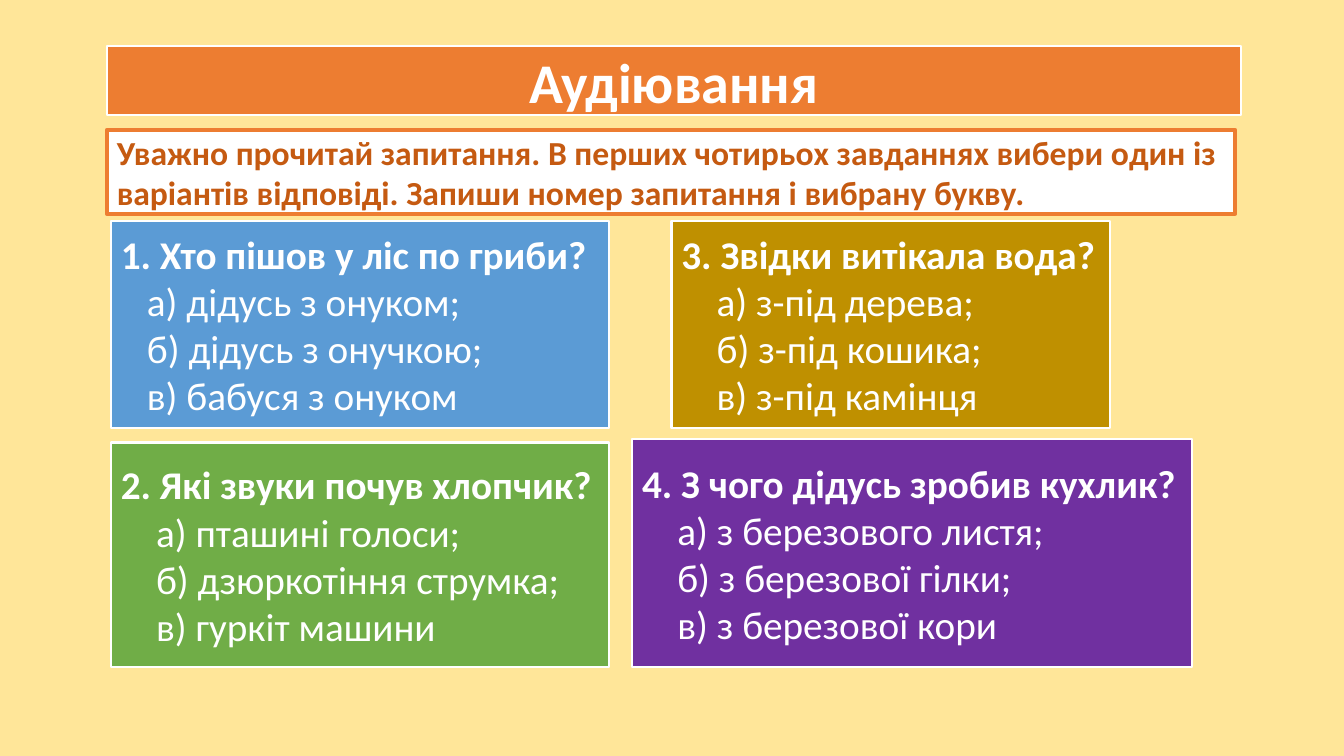
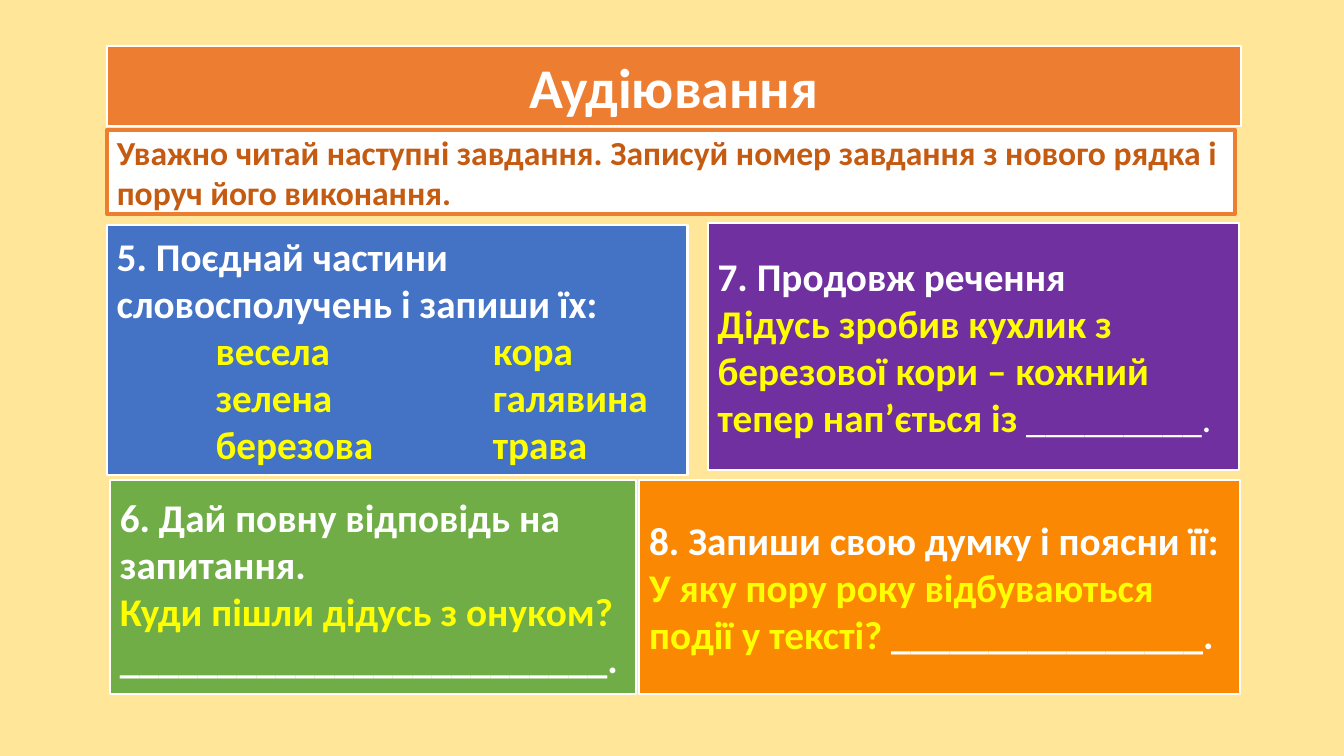
from lxml.etree import SubElement
from pptx import Presentation
from pptx.dml.color import RGBColor
from pptx.enum.shapes import MSO_SHAPE
from pptx.enum.text import MSO_ANCHOR, MSO_AUTO_SIZE, PP_ALIGN
from pptx.oxml.ns import qn
from pptx.util import Inches, Pt

COLORS = {
    "sand": "FFE699",
    "white": "FFFFFF",
    "orange": "ED7D31",
    "rust": "C55A11",
    "sky": "5B9BD5",
    "blue": "4472C4",
    "green": "70AD47",
    "purple": "7030A0",
    "gold": "BF9000",
    "amber": "FA8803",
    "yellow": "FFFF00",
}


class Quiz:
    font = "Calibri"
    left, top = 1.06, 0.46

    def __init__(self):
        self.deck = Presentation()
        self.deck.slide_width = Inches(13.33)
        self.deck.slide_height = Inches(7.5)
        self.paint(self.deck.slide_master.background.fill, "sand")
        self.slide = None

    @staticmethod
    def paint(fill, color):
        fill.solid()
        fill.fore_color.rgb = RGBColor.from_string(COLORS[color])

    def style(self, paragraph, size, color="white", bold=True, align=PP_ALIGN.LEFT):
        paragraph.alignment = align
        for run in paragraph.runs:
            self.style_run(run, size, color, bold)

    def style_run(self, run, size, color, bold):
        run.font.name = self.font
        run.font.size = Pt(size)
        run.font.bold = bold
        run.font.color.rgb = RGBColor.from_string(COLORS[color])

    def frame(self, panel, fill, line="white", width=1.5):
        self.paint(panel.fill, fill)
        panel.line.color.rgb = RGBColor.from_string(COLORS[line])
        panel.line.width = Pt(width)
        panel.text_frame.word_wrap = True
        panel.text_frame.auto_size = MSO_AUTO_SIZE.NONE
        panel.text_frame.vertical_anchor = MSO_ANCHOR.MIDDLE

    def box(self, place, fill, text, line="white", width=1.5):
        panel = self.slide.shapes.add_shape(MSO_SHAPE.RECTANGLE, *map(Inches, place))
        panel.shadow.inherit = False
        self.frame(panel, fill, line, width)
        panel.text_frame.text = text
        return panel.text_frame.paragraphs

    def page(self, title, title_height, instruction):
        self.slide = self.deck.slides.add_slide(self.deck.slide_layouts[5])
        heading = self.slide.shapes.title
        heading.left, heading.top = Inches(self.left), Inches(self.top)
        heading.width, heading.height = Inches(11.25), Inches(title_height)
        self.frame(heading, "orange")
        heading.text_frame.text = title
        self.style(heading.text_frame.paragraphs[0], 40, align=PP_ALIGN.CENTER)
        guide = self.box((self.left, 1.29, 11.19, 0.83), "white", instruction, "orange", 3)
        self.style(guide[0], 24, "rust")

    def choice(self, place, fill, question, answers, indent=0.35):
        heading, *options = self.box(place, fill, "\n".join([question, *answers]))
        self.style(heading, 28)
        for option in options:
            option._p.get_or_add_pPr().set("marL", str(Inches(indent)))
            self.style(option, 28, bold=False)

    def task(self, place, fill, question, prompt, blank, blank_bold=True, own_line=False):
        lines = [question, prompt] + ([blank] if own_line else [])
        heading, request, *answer = self.box(place, fill, "\n".join(lines))
        self.style(heading, 28)
        self.style(request, 28, "yellow")
        for line in answer:
            self.style(line, 28, bold=blank_bold)
        if not own_line:
            gap = request.add_run()
            gap.text = blank
            self.style_run(gap, 28, "white", blank_bold)

    def matching(self, place, fill, question, pairs, columns):
        rows = ["\t" + "\t".join(pair) for pair in pairs]
        heading, *matches = self.box(place, fill, "\n".join([question, *rows]))
        self.style(heading, 28)
        for match in matches:
            stops = SubElement(match._p.get_or_add_pPr(), qn("a:tabLst"))
            for column in columns:
                SubElement(stops, qn("a:tab"), pos=str(Inches(column)), algn="l")
            self.style(match, 28, "yellow")


def main():
    quiz = Quiz()
    title = "Аудіювання"

    quiz.page(title, 0.68, "Уважно прочитай запитання. В перших чотирьох завданнях вибери один із "
              "варіантів відповіді. Запиши номер запитання і вибрану букву.")
    quiz.choice((1.1, 2.19, 4.94, 2.06), "sky", "1. Хто пішов у ліс по гриби?",
                ["а) дідусь з онуком;", "б) дідусь з онучкою;", "в) бабуся з онуком"], 0.26)
    quiz.choice((1.1, 4.39, 4.94, 2.23), "green", "2. Які звуки почув хлопчик?",
                ["а) пташині голоси;", "б) дзюркотіння струмка;", "в) гуркіт машини"])
    quiz.choice((6.66, 2.19, 4.35, 2.06), "gold", "3. Звідки витікала вода?",
                ["а) з-під дерева;", "б) з-під кошика;", "в) з-під камінця"])
    quiz.choice((6.27, 4.36, 5.55, 2.26), "purple", "4. З чого дідусь зробив кухлик?",
                ["а) з березового листя;", "б) з березової гілки;", "в) з березової кори"])

    quiz.page(title, 0.79, "Уважно читай наступні завдання. Записуй номер завдання з нового рядка і "
              "поруч його виконання.")
    quiz.matching((1.06, 2.23, 5.76, 2.48), "blue", "5. Поєднай частини словосполучень і запиши їх:",
                  [("весела", "кора"), ("зелена", "галявина"), ("березова", "трава")], (0.98, 3.73))
    quiz.task((1.09, 4.76, 5.22, 2.13), "green", "6. Дай повну відповідь на запитання.",
              "Куди пішли дідусь з онуком?", "_" * 25 + ".", own_line=True)
    quiz.task((7.02, 2.21, 5.27, 2.45), "purple", "7. Продовж речення",
              "Дідусь зробив кухлик з березової кори – кожний тепер нап’ється із ",
              "_" * 9 + ".", blank_bold=False)
    quiz.task((6.34, 4.76, 5.96, 2.13), "amber", "8. Запиши свою думку і поясни її:",
              "У яку пору року відбуваються події у тексті? ", "_" * 16 + ".")

    quiz.deck.save("out.pptx")


if __name__ == "__main__":
    main()
